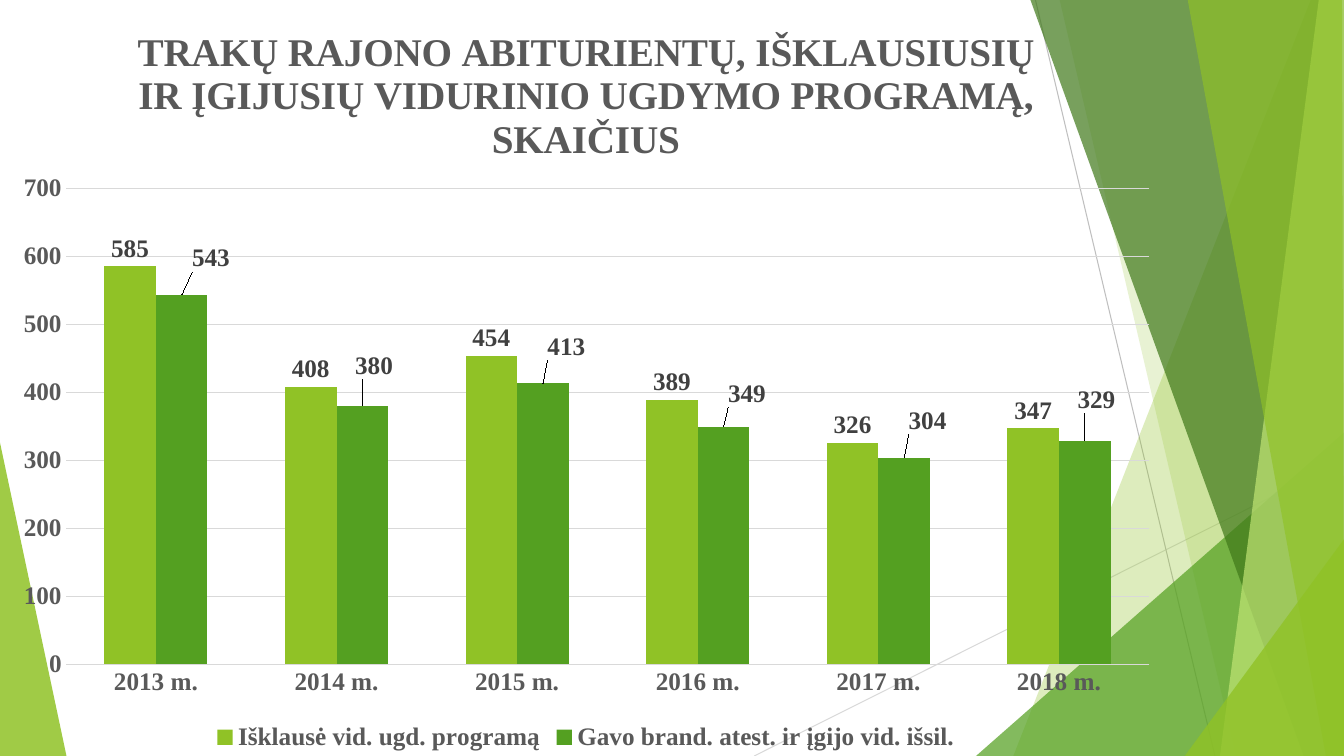
from lxml import etree
from pptx import Presentation
from pptx.chart.data import CategoryChartData
from pptx.dml.color import RGBColor
from pptx.enum.chart import XL_CHART_TYPE, XL_LABEL_POSITION, XL_LEGEND_POSITION, XL_TICK_MARK
from pptx.enum.shapes import MSO_CONNECTOR
from pptx.enum.text import PP_ALIGN
from pptx.oxml.ns import qn
from pptx.util import Inches, Pt

COLUMNS = XL_CHART_TYPE.COLUMN_CLUSTERED
OUTSIDE_END = XL_LABEL_POSITION.OUTSIDE_END
LEGEND_BOTTOM = XL_LEGEND_POSITION.BOTTOM
NO_TICK = XL_TICK_MARK.NONE
STRAIGHT = MSO_CONNECTOR.STRAIGHT
CENTER = PP_ALIGN.CENTER

W, H = 13.33, 7.5
FONT = "Times New Roman"
COLORS = {
    "lime": "90C226", "green": "54A021", "dark": "3F7819", "pale": "C0E474",
    "grid": "D9D9D9", "ray": "BFBFBF", "text": "595959", "label": "404040",
    "base": "000000",
}

# Corner points, colour, opacity in percent
LEFT_FACET = ([(0, 4.39), (0.66, H), (0, H)], "lime", 85)
RIGHT_FACETS = [
    ([(13, 0), (10.05, H), (W, H), (W, 0)], "lime", 30),
    ([(10.51, 0), (12.26, H), (W, H), (W, 0)], "lime", 20),
    ([(9.68, H), (W, 4.29), (W, H)], "green", 72),
    ([(10.22, 0), (12.93, H), (W, H), (W, 0)], "dark", 70),
    ([(13.08, 0), (12.1, H), (W, H), (W, 0)], "pale", 70),
    ([(11.78, 0), (13.15, H), (W, H), (13.31, 0)], "lime", 65),
    ([(11.75, H), (W, 5.35), (W, H)], "lime", 80),
]
RAYS = [((7.48, H), (W, 4.57), "grid"), ((10.27, 0), (12.05, H), "ray")]

TITLE = "TRAKŲ RAJONO ABITURIENTŲ, IŠKLAUSIUSIŲ IR ĮGIJUSIŲ VIDURINIO UGDYMO PROGRAMĄ, SKAIČIUS"
YEARS = [f"{year} m." for year in range(2013, 2019)]
SERIES = [
    ("Išklausė vid. ugd. programą", (585, 408, 454, 389, 326, 347), "lime"),
    ("Gavo brand. atest. ir įgijo vid. išsil.", (543, 380, 413, 349, 304, 329), "green"),
]
# Shift of each label of the second series, as fractions of the chart
LABEL_SHIFTS = [(0.025, -0.025), (0.01, -0.03), (0.02, -0.025),
                (0.02, -0.02), (0.02, -0.025), (0.01, -0.03)]


def rgb(name):
    return RGBColor.from_string(COLORS[name])


def set_font(font, size, color, name=FONT, bold=True):
    font.size, font.bold, font.name = Pt(size), bold, name
    font.color.rgb = rgb(color)


def add_facet(slide, points, color, opacity):
    corners = [(Inches(x), Inches(y)) for x, y in points]
    builder = slide.shapes.build_freeform(*corners[0], scale=1.0)
    builder.add_line_segments(corners[1:], close=True)
    sp = builder.convert_to_shape()
    sp.shadow.inherit = False
    sp.line.fill.background()
    sp.fill.solid()
    sp.fill.fore_color.rgb = rgb(color)
    clr = next(sp._element.spPr.iter(qn("a:srgbClr")))
    etree.SubElement(clr, qn("a:alpha"), val=str(opacity * 1000))


def add_ray(slide, start, end, color):
    line = slide.shapes.add_connector(STRAIGHT, *(Inches(v) for v in start + end))
    line.line.color.rgb = rgb(color)
    line.line.width = Pt(0.75)
    etree.SubElement(line._element.spPr, qn("a:effectLst"))


def add_background(slide):
    add_facet(slide, *LEFT_FACET)
    for ray in RAYS:
        add_ray(slide, *ray)
    for facet in RIGHT_FACETS:
        add_facet(slide, *facet)


def make_layout(**settings):
    """Return a c:layout element holding the given manual settings."""
    layout = etree.Element(qn("c:layout"))
    manual = etree.SubElement(layout, qn("c:manualLayout"))
    for tag, val in settings.items():
        etree.SubElement(manual, qn(f"c:{tag}"), val=str(val))
    return layout


def place_plot(chart, x, y, w, h):
    """Fix the inner plot area at fractions of the chart."""
    area = chart._chartSpace.chart.plotArea
    for old in area.findall(qn("c:layout")):
        area.remove(old)
    area.insert(0, make_layout(layoutTarget="inner", xMode="edge", yMode="edge",
                               x=x, y=y, w=w, h=h))


def style_axes(chart):
    for axis in (chart.category_axis, chart.value_axis):
        axis.major_tick_mark = axis.minor_tick_mark = NO_TICK
        axis.format.line.fill.background()
        set_font(axis.tick_labels.font, 18, "text")
    axis = chart.value_axis
    axis.minimum_scale, axis.maximum_scale, axis.major_unit = 0, 700, 100
    axis.has_major_gridlines = True
    grid = axis.major_gridlines.format.line
    grid.color.rgb = rgb("grid")
    grid.width = Pt(0.75)


def style_series(series, color):
    series.format.fill.solid()
    series.format.fill.fore_color.rgb = rgb(color)
    labels = series.data_labels
    labels.show_value = True
    labels.position = OUTSIDE_END
    set_font(labels.font, 18, "label")


def shift_labels(series, shifts):
    for i, _ in enumerate(shifts):
        label = series.points[i].data_label
        set_font(label.font, 18, "label")
        label.position = OUTSIDE_END
    for dlbl, (dx, dy) in zip(series._element.iter(qn("c:dLbl")), shifts):
        dlbl.insert(1, make_layout(x=dx, y=dy))


def add_graduates_chart(slide, left, top, width, height):
    data = CategoryChartData()
    data.categories = YEARS
    for name, values, _ in SERIES:
        data.add_series(name, values)
    box = (Inches(v) for v in (left, top, width, height))
    chart = slide.shapes.add_chart(COLUMNS, *box, data).chart
    set_font(chart.font, 10, "base", "Karla", False)

    chart.has_title = True
    p = chart.chart_title.text_frame.paragraphs[0]
    p.text = TITLE
    p.alignment = CENTER
    set_font(p.font, 28, "text")
    chart.chart_title.include_in_layout = False

    chart.has_legend = True
    chart.legend.position = LEGEND_BOTTOM
    chart.legend.include_in_layout = False
    set_font(chart.legend.font, 18, "text")

    style_axes(chart)
    plot = chart.plots[0]
    plot.gap_width, plot.overlap, plot.vary_by_categories = 150, 0, False
    for series, (_, _, color) in zip(plot.series, SERIES):
        style_series(series, color)
    shift_labels(plot.series[1], LABEL_SHIFTS)
    place_plot(chart, 0.056, 0.249, 0.925, 0.63)


def main():
    prs = Presentation()
    prs.slide_width, prs.slide_height = Inches(W), Inches(H)
    slide = prs.slides.add_slide(prs.slide_layouts[6])
    add_background(slide)
    add_graduates_chart(slide, 0, 0, 11.62, H)
    prs.save("out.pptx")


if __name__ == "__main__":
    main()
